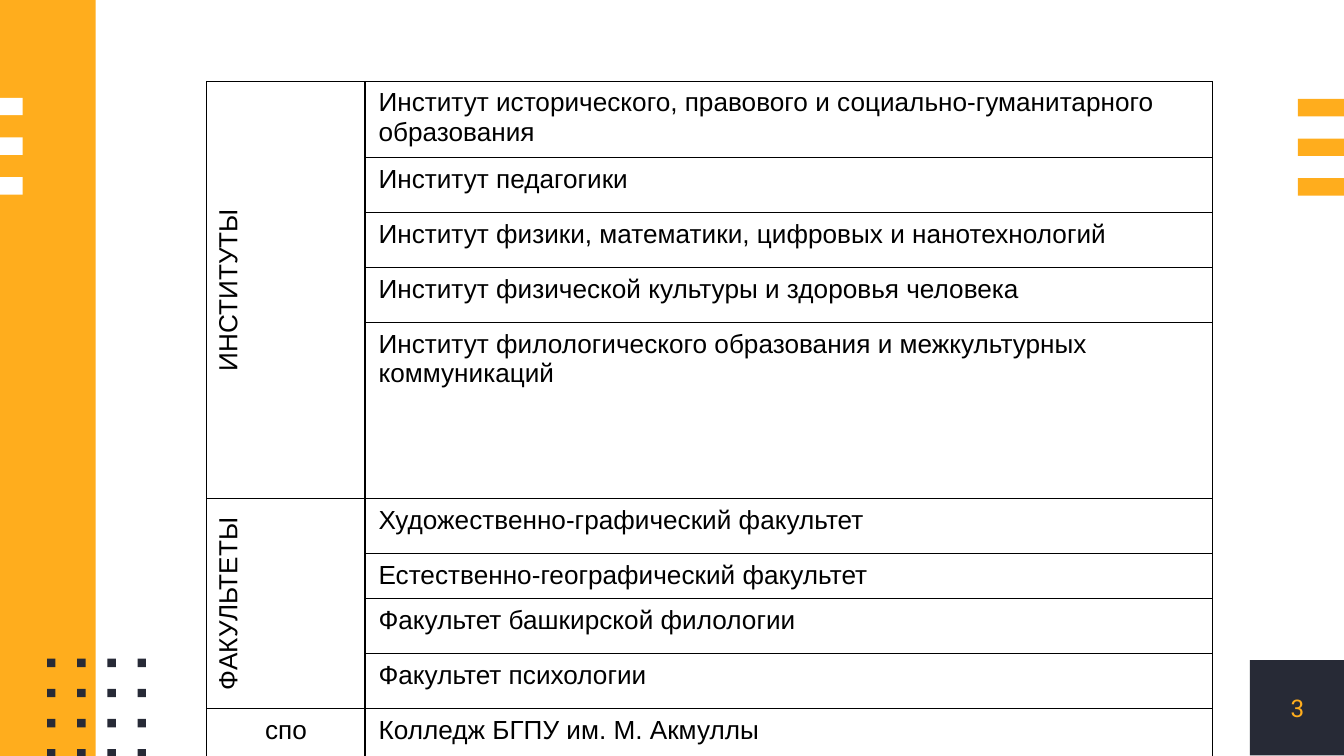
from typing import NamedTuple

from lxml import etree
from pptx import Presentation
from pptx import util as u
from pptx.dml.color import RGBColor
from pptx.enum import shapes, text
from pptx.oxml import ns

GOLD = RGBColor(0xFF, 0xAD, 0x1D)
DARK = RGBColor(0x27, 0x2A, 0x36)
WHITE = RGBColor(0xFF, 0xFF, 0xFF)
BLACK = RGBColor(0x00, 0x00, 0x00)

ROW = 1.04
LOW = 0.81


class Box(NamedTuple):
    left: float
    top: float
    width: float
    height: float
    color: RGBColor


class Grid(NamedTuple):
    first: Box
    cols: int
    rows: int
    step: float


class Group(NamedTuple):
    label: str
    turned: bool
    units: list[tuple[str, float]]


PANELS = [
    Box(23.62, 12.48, 1.8, 1.8, DARK),
    Box(0, 0, 1.81, 14.29, GOLD),
]
GRIDS = [
    Grid(Box(0, 1.85, 0.43, 0.33, WHITE), 1, 3, 0.75),
    Grid(Box(0.89, 12.45, 0.16, 0.16, DARK), 4, 4, 0.57),
    Grid(Box(24.53, 1.87, 0.87, 0.33, GOLD), 1, 3, 0.75),
]
GROUPS = [
    Group("ИНСТИТУТЫ", True, [
        ("Институт исторического, правового и социально-гуманитарного образования", ROW),
        ("Институт педагогики", ROW),
        ("Институт физики, математики, цифровых и нанотехнологий", ROW),
        ("Институт физической культуры и здоровья человека", ROW),
        ("Институт филологического образования и межкультурных коммуникаций", ROW),
    ]),
    Group("ФАКУЛЬТЕТЫ", True, [
        ("Художественно-графический факультет", ROW),
        ("Естественно-географический факультет", LOW),
        ("Факультет башкирской филологии", ROW),
        ("Факультет психологии", ROW),
    ]),
    Group("спо", False, [("Колледж БГПУ им. М. Акмуллы", ROW)]),
]


def write(frame, words: str, *, size: float = 14, font: str = "Arial",
          color: RGBColor = BLACK, align=text.PP_ALIGN.LEFT) -> None:
    para = frame.paragraphs[0]
    para.alignment = align
    run = para.add_run()
    run.text = words
    run.font.size = u.Pt(size)
    run.font.name = font
    run.font.color.rgb = color


def draw_box(slide, box: Box) -> None:
    shape = slide.shapes.add_shape(
        shapes.MSO_SHAPE.RECTANGLE, *(u.Cm(side) for side in box[:4]))
    shape.shadow.inherit = False
    shape.fill.solid()
    shape.fill.fore_color.rgb = box.color
    shape.line.fill.background()


def draw_grid(slide, grid: Grid) -> None:
    for row in range(grid.rows):
        for col in range(grid.cols):
            draw_box(slide, grid.first._replace(
                left=grid.first.left + col * grid.step,
                top=grid.first.top + row * grid.step))


def frame_cell(cell) -> None:
    props = cell._tc.get_or_add_tcPr()
    for side in ("a:lnL", "a:lnR", "a:lnT", "a:lnB"):
        line = etree.SubElement(props, ns.qn(side), w=str(u.Pt(0.75)))
        fill = etree.SubElement(line, ns.qn("a:solidFill"))
        etree.SubElement(fill, ns.qn("a:srgbClr"), val=str(BLACK))
    cell.fill.background()


def draw_table(slide, groups: list[Group]) -> None:
    sizes = [size for group in groups for _, size in group.units]
    table = slide.shapes.add_table(
        len(sizes), 2, u.Cm(3.91), u.Cm(1.54), u.Cm(19), u.Cm(sum(sizes))).table
    table.first_row = table.horz_banding = False
    for col, width in zip(table.columns, (2.99, 16.01)):
        col.width = u.Cm(width)
    for row, size in zip(table.rows, sizes):
        row.height = u.Cm(size)
    for cell in table.iter_cells():
        frame_cell(cell)

    start = 0
    for group in groups:
        head = table.cell(start, 0)
        if len(group.units) > 1:
            head.merge(table.cell(start + len(group.units) - 1, 0))
        write(head.text_frame, group.label, align=text.PP_ALIGN.CENTER)
        if group.turned:
            head.vertical_anchor = text.MSO_ANCHOR.MIDDLE
            head._tc.tcPr.set("vert", "vert270")
        for row, (name, _) in enumerate(group.units, start):
            write(table.cell(row, 1).text_frame, name)
        start += len(group.units)


def draw_page(slide, words: str, box: Box) -> None:
    frame = slide.shapes.add_textbox(*(u.Cm(side) for side in box[:4])).text_frame
    frame.word_wrap = True
    frame.vertical_anchor = text.MSO_ANCHOR.MIDDLE
    frame.margin_left = frame.margin_right = 0
    frame.margin_top = frame.margin_bottom = 0
    write(frame, words, size=13, font="Roboto", color=GOLD,
          align=text.PP_ALIGN.CENTER)


def main() -> None:
    deck = Presentation()
    deck.slide_width, deck.slide_height = u.Cm(25.4), u.Cm(14.29)
    slide = deck.slides.add_slide(deck.slide_layouts[6])
    for box in PANELS:
        draw_box(slide, box)
    for grid in GRIDS:
        draw_grid(slide, grid)
    draw_page(slide, "3", PANELS[0])
    draw_table(slide, GROUPS)
    deck.save("out.pptx")


if __name__ == "__main__":
    main()
